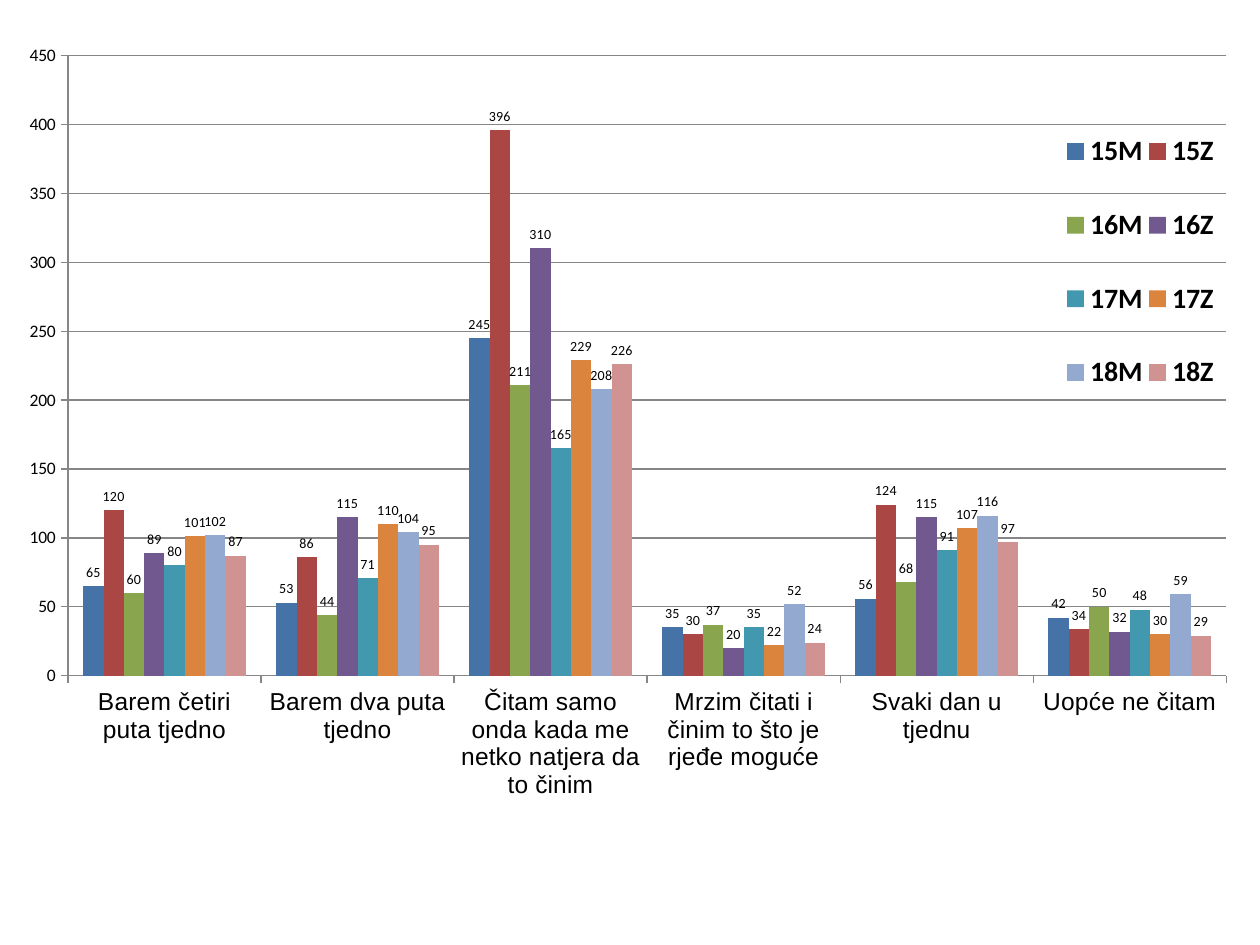
from lxml.etree import SubElement
from pptx import Presentation
from pptx.chart.data import CategoryChartData as ChartData
from pptx.dml.color import RGBColor as RGB
from pptx.enum.chart import XL_CHART_TYPE as Kind
from pptx.enum.chart import XL_LABEL_POSITION as Spot
from pptx.enum.chart import XL_LEGEND_POSITION as Side
from pptx.enum.chart import XL_TICK_MARK as Tick
from pptx.oxml.ns import qn
from pptx.util import Inches, Pt

BLACK = RGB(0x00, 0x00, 0x00)
GRAY = RGB(0x86, 0x86, 0x86)

CATS = [
    "Barem četiri puta tjedno",
    "Barem dva puta tjedno",
    "Čitam samo onda kada me netko natjera da to činim",
    "Mrzim čitati i činim to što je rjeđe moguće",
    "Svaki dan u tjednu",
    "Uopće ne čitam",
]
GROUPS = [
    ("15M", RGB(0x45, 0x72, 0xA7), (65, 53, 245, 35, 56, 42)),
    ("15Z", RGB(0xAA, 0x46, 0x43), (120, 86, 396, 30, 124, 34)),
    ("16M", RGB(0x89, 0xA5, 0x4E), (60, 44, 211, 37, 68, 50)),
    ("16Z", RGB(0x71, 0x58, 0x8F), (89, 115, 310, 20, 115, 32)),
    ("17M", RGB(0x41, 0x98, 0xAF), (80, 71, 165, 35, 91, 48)),
    ("17Z", RGB(0xDB, 0x84, 0x3D), (101, 110, 229, 22, 107, 30)),
    ("18M", RGB(0x93, 0xA9, 0xCF), (102, 104, 208, 52, 116, 59)),
    ("18Z", RGB(0xD1, 0x93, 0x92), (87, 95, 226, 24, 97, 29)),
]


def set_font(font, size, name="Calibri", bold=False):
    font.size, font.name, font.bold = Pt(size), name, bold
    font.color.rgb = BLACK


def set_line(line):
    line.color.rgb = GRAY
    line.width = Pt(0.75)


def set_place(node, index, box, inner=False):
    for old in node.findall(qn("c:layout")):
        node.remove(old)
    layout = SubElement(node, qn("c:layout"))
    node.insert(index, layout)
    manual = SubElement(layout, qn("c:manualLayout"))
    parts = [("layoutTarget", "inner")] if inner else []
    parts += [("xMode", "edge"), ("yMode", "edge"), *zip("xywh", box)]
    for tag, val in parts:
        SubElement(manual, qn("c:" + tag)).set("val", str(val))


def style_axes(chart):
    cat, val = chart.category_axis, chart.value_axis
    set_font(cat.tick_labels.font, 14, "Arial")
    set_font(val.tick_labels.font, 10)
    for axis in (cat, val):
        axis.major_tick_mark = Tick.OUTSIDE
        axis.minor_tick_mark = Tick.NONE
        set_line(axis.format.line)
    val.minimum_scale, val.maximum_scale, val.major_unit = 0, 450, 50
    val.has_major_gridlines = True
    set_line(val.major_gridlines.format.line)


def style_bars(plot):
    plot.gap_width, plot.overlap = 150, 0
    plot.vary_by_categories = False
    for series, (_, color, _) in zip(plot.series, GROUPS):
        series.format.fill.solid()
        series.format.fill.fore_color.rgb = color
        labels = series.data_labels
        labels.show_value = True
        labels.position = Spot.OUTSIDE_END
        set_font(labels.font, 8)


def style_legend(chart):
    chart.has_legend = True
    legend = chart.legend
    legend.position = Side.RIGHT
    legend.include_in_layout = False
    set_font(legend.font, 16, bold=True)
    set_place(legend._element, 1, (0.85, 0.08, 0.13, 0.39))


def add_bars(slide, left, top, width, height):
    data = ChartData()
    data.categories = CATS
    for name, _, vals in GROUPS:
        data.add_series(name, vals)
    chart = slide.shapes.add_chart(
        Kind.COLUMN_CLUSTERED, left, top, width, height, data
    ).chart
    chart.has_title = False
    set_font(chart.font, 10)
    style_axes(chart)
    style_bars(chart.plots[0])
    style_legend(chart)
    area = chart._chartSpace.chart.plotArea
    set_place(area, 0, (0.043, 0.034, 0.942, 0.724), inner=True)


def main():
    deck = Presentation()
    deck.slide_width, deck.slide_height = Inches(10), Inches(7.5)
    slide = deck.slides.add_slide(deck.slide_layouts[6])
    add_bars(slide, Inches(0.12), Inches(0.21), Inches(9.76), Inches(6.8))
    deck.save("out.pptx")


if __name__ == "__main__":
    main()
